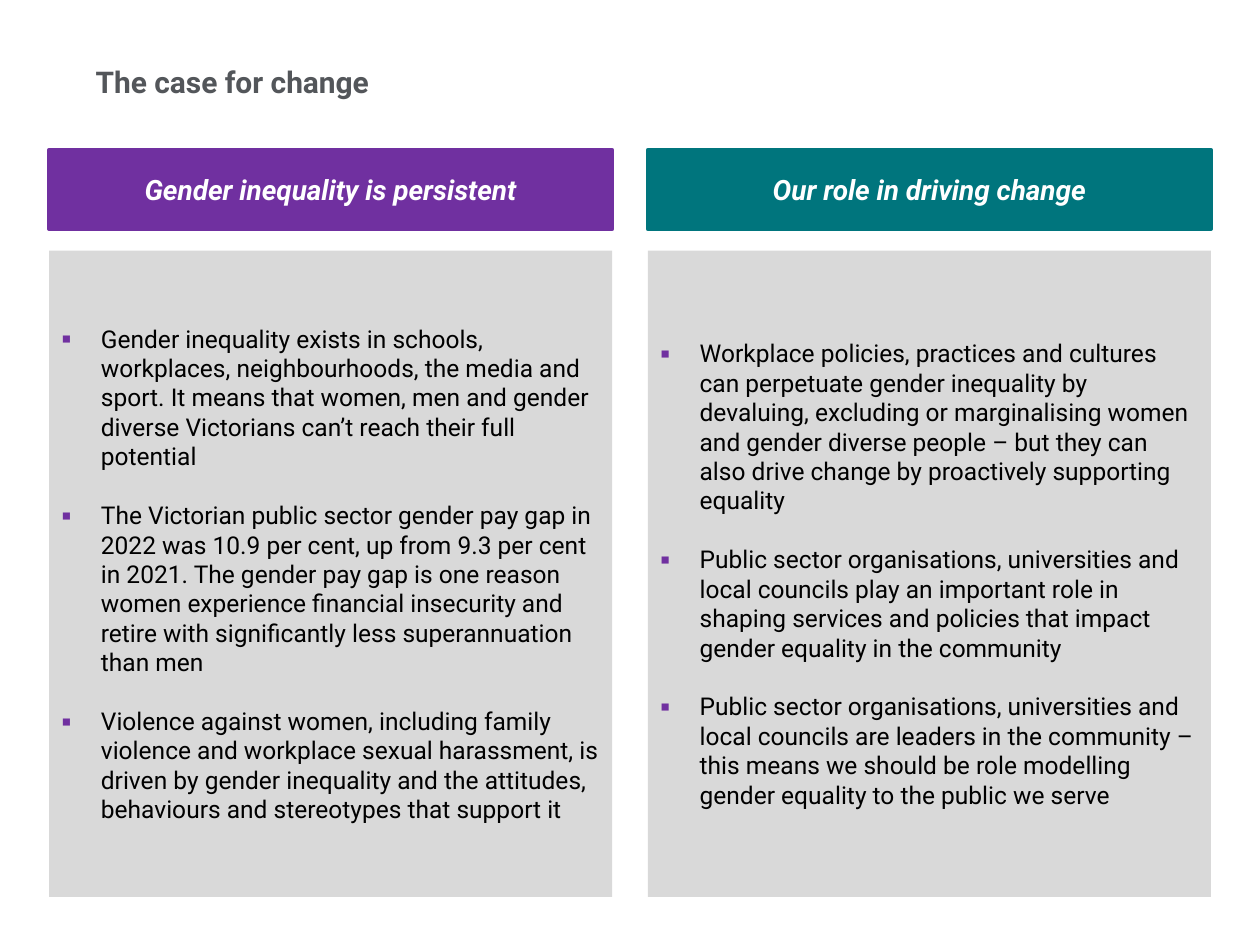
from lxml.etree import SubElement
from pptx import Presentation
from pptx.dml.color import RGBColor as Rgb
from pptx.enum.text import MSO_ANCHOR as Anchor, MSO_AUTO_SIZE as Fit, PP_ALIGN as Align
from pptx.oxml.ns import qn
from pptx.util import Cm, Pt

FONT = "Roboto"
HUES = {"title": "53565A", "text": "000000", "white": "FFFFFF", "panel": "D9D9D9",
        "purple": "7030A0", "teal": "00757D"}
WIDE, LEFT, STEP = 11.35, 0.99, 12.07
COLS = [
    ("Gender inequality is persistent", "purple", [
        "Gender inequality exists in schools, workplaces, neighbourhoods, the media and sport. "
        "It means that women, men and gender diverse Victorians can’t reach their full potential",
        "The Victorian public sector gender pay gap in 2022 was 10.9 per cent, up from 9.3 per "
        "cent in 2021. The gender pay gap is one reason women experience financial insecurity "
        "and retire with significantly less superannuation than men",
        "Violence against women, including family violence and workplace sexual harassment, is "
        "driven by gender inequality and the attitudes, behaviours and stereotypes that "
        "support it",
    ]),
    ("Our role in driving change", "teal", [
        "Workplace policies, practices and cultures can perpetuate gender inequality by "
        "devaluing, excluding or marginalising women and gender diverse people – but they can "
        "also drive change by proactively supporting equality",
        "Public sector organisations, universities and local councils play an important role in "
        "shaping services and policies that impact gender equality in the community",
        "Public sector organisations, universities and local councils are leaders in the "
        "community – this means we should be role modelling gender equality to the public "
        "we serve",
    ]),
]


def tint(name):
    """Return the named colour."""
    return Rgb.from_string(HUES[name])


def place(shape, x, y, w, h, anchor=Anchor.MIDDLE):
    """Move a placeholder to a box in cm and return its text frame."""
    shape.left, shape.top, shape.width, shape.height = map(Cm, (x, y, w, h))
    frame = shape.text_frame
    frame.word_wrap, frame.auto_size = True, Fit.NONE
    frame.vertical_anchor = anchor
    return frame


def paint(shape, hue):
    """Fill a shape with the named colour."""
    shape.fill.solid()
    shape.fill.fore_color.rgb = tint(hue)


def write(para, text, size, hue, bold=False, slant=False):
    """Add one formatted run."""
    run = para.add_run()
    run.text = text
    font = run.font
    font.name, font.size, font.bold, font.italic = FONT, Pt(size), bold, slant
    font.color.rgb = tint(hue)


def mark(para):
    """Give a paragraph a hanging purple square bullet."""
    props = para._p.get_or_add_pPr()
    props.set("marL", str(Cm(0.79)))
    props.set("indent", str(-Cm(0.79)))
    SubElement(SubElement(props, qn("a:buClr")), qn("a:srgbClr"), val=HUES["purple"])
    SubElement(props, qn("a:buFont"), typeface=FONT)
    SubElement(props, qn("a:buChar"), char="▪")


def head(shape, x, y, w, h):
    """Write the slide title."""
    frame = place(shape, x, y, w, h, Anchor.BOTTOM)
    frame.margin_left = frame.margin_right = frame.margin_top = frame.margin_bottom = 0
    para = frame.paragraphs[0]
    para.alignment = Align.LEFT
    write(para, "The case for change", 17.1, "title", bold=True)


def banner(shape, x, y, w, h, text, hue):
    """Write a column heading on a coloured band."""
    para = place(shape, x, y, w, h).paragraphs[0]
    paint(shape, hue)
    shape.line.color.rgb, shape.line.width = tint(hue), Pt(2.25)
    para.alignment = Align.CENTER
    para.space_before, para.space_after = Pt(0), Pt(6)
    write(para, text, 16, "white", bold=True, slant=True)


def points(shape, x, y, w, h, items):
    """Write a bulleted list on a grey panel."""
    frame = place(shape, x, y, w, h)
    paint(shape, "panel")
    for i, item in enumerate(items):
        para = frame.add_paragraph() if i else frame.paragraphs[0]
        para.space_before = Pt(16.8 if i else 0)
        mark(para)
        write(para, item, 14, "text")


def column(top, low, x, y, w, title, hue, items):
    """Place a heading band and the list panel below it."""
    banner(top, x, y, w, 1.6, title, hue)
    points(low, x, y + 2.03, w, 13.03, items)


def main():
    """Build the slide and save it."""
    deck = Presentation()
    deck.slide_width, deck.slide_height = Cm(25.4), Cm(19.05)
    slide = deck.slides.add_slide(deck.slide_layouts[4])
    title, *slots = slide.placeholders
    head(title, 1.93, 0, 17.09, 2.01)
    for i, col in enumerate(COLS):
        column(slots[2 * i], slots[2 * i + 1], LEFT + i * STEP, 3.02, WIDE, *col)
    deck.save("out.pptx")


if __name__ == "__main__":
    main()
